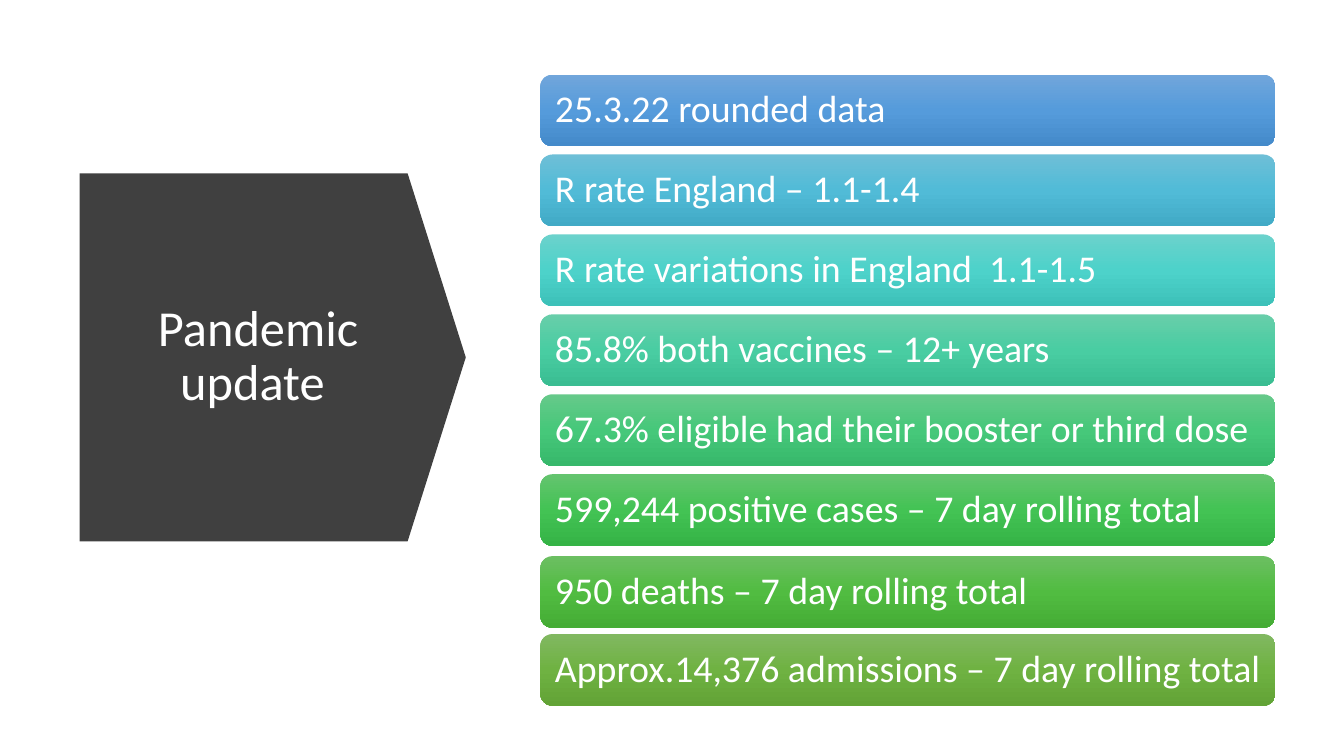
from copy import deepcopy

from pptx import Presentation
from pptx.dml.color import RGBColor as Rgb
from pptx.enum.shapes import MSO_SHAPE as Shape
from pptx.enum.text import MSO_ANCHOR as Anchor, PP_ALIGN as Align
from pptx.oxml.ns import qn
from pptx.util import Inches, Pt

WIDE, HIGH = 13.33, 7.5
COLORS = {"dark": "404040", "text": "FFFFFF"}
FONT = "Calibri"

LEFT, TOP, LAST = 5.36, 0.74, 6.29
BAR_W, BAR_H = 7.29, 0.71
# Text, gradient from top to bottom, and downward shift from the even grid
BARS = [
    ("25.3.22 rounded data", ("71A6DB", "559BDB", "448ACA"), 0),
    ("R rate England – 1.1-1.4", ("6EBFD7", "51BBD7", "41AAC6"), 0),
    ("R rate variations in England  1.1-1.5", ("6BD2CC", "4DD2CA", "3DC1B9"), 0),
    ("85.8% both vaccines – 12+ years", ("68CEAA", "49CDA2", "3ABD92"), 0),
    ("67.3% eligible had their booster or third dose",
     ("66C98A", "46C87A", "37B86B"), 0),
    ("599,244 positive cases – 7 day rolling total",
     ("64C46F", "43C354", "35B346"), 0),
    ("950 deaths – 7 day rolling total", ("6CBF62", "51BC41", "45AC35"), 0.02),
    ("Approx.14,376 admissions – 7 day rolling total",
     ("81B861", "6FB242", "62A336"), 0),
]
PITCH = (LAST - TOP) / (len(BARS) - 1)


def put_text(shape, text, size, align=Align.LEFT, pads=(0.1, 0.05, 0.1, 0.05)):
    """Fill a shape with one paragraph; pads are left, top, right, bottom."""
    frame = shape.text_frame
    frame.word_wrap = True
    frame.vertical_anchor = Anchor.MIDDLE
    (frame.margin_left, frame.margin_top,
     frame.margin_right, frame.margin_bottom) = map(Inches, pads)
    para = frame.paragraphs[0]
    para.alignment = align
    para.line_spacing = 0.9
    run = para.add_run()
    run.text = text
    run.font.name = FONT
    run.font.size = Pt(size)
    run.font.color.rgb = Rgb.from_string(COLORS["text"])


def add_plain(slide, kind, *box):
    shape = slide.shapes.add_shape(kind, *map(Inches, box))
    shape.shadow.inherit = False
    shape.line.fill.background()
    return shape


def set_blend(shape, tones):
    """Blend three tones evenly from top to bottom."""
    fill = shape.fill
    fill.gradient()
    fill.gradient_angle = 270
    stops = shape._element.spPr.find(".//" + qn("a:gsLst"))
    stops.append(deepcopy(stops[0]))
    for stop, tone, place in zip(fill.gradient_stops, tones, (0, 0.5, 1)):
        stop.color.rgb = Rgb.from_string(tone)
        stop.position = place


def add_title(slide):
    arrow = add_plain(slide, Shape.DOWN_ARROW, 0.88, 1.63, 3.65, 3.83)
    arrow.rotation = 270
    arrow.adjustments[0], arrow.adjustments[1] = 1, 0.158
    arrow.fill.solid()
    arrow.fill.fore_color.rgb = Rgb.from_string(COLORS["dark"])
    box = slide.shapes.add_textbox(*map(Inches, (1.12, 2.15, 2.88, 2.79)))
    put_text(box, "Pandemic update ", 36, align=Align.CENTER)


def add_bar(slide, row, text, tones, shift):
    top = TOP + row * PITCH + shift
    bar = add_plain(slide, Shape.ROUNDED_RECTANGLE, LEFT, top, BAR_W, BAR_H)
    set_blend(bar, tones)
    put_text(bar, text, 27, pads=(0.11, 0.11, 0.05, 0.11))


def main():
    deck = Presentation()
    deck.slide_width, deck.slide_height = Inches(WIDE), Inches(HIGH)
    slide = deck.slides.add_slide(deck.slide_layouts[6])
    add_title(slide)
    for row, bar in enumerate(BARS):
        add_bar(slide, row, *bar)
    deck.save("out.pptx")


if __name__ == "__main__":
    main()
